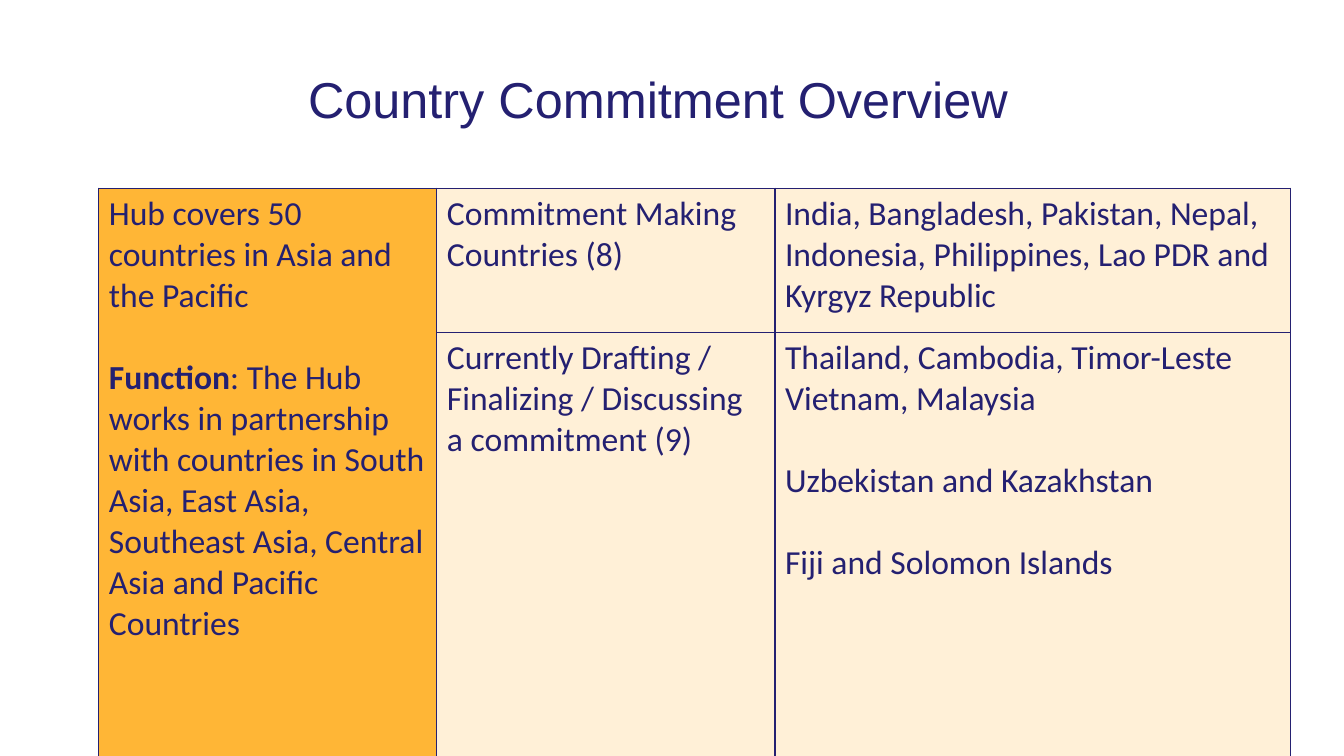
from lxml import etree
from pptx import Presentation
from pptx.dml.color import RGBColor
from pptx.enum.text import PP_ALIGN
from pptx.oxml.ns import qn
from pptx.util import Cm, Pt

CENTER = PP_ALIGN.CENTER
NAVY, ORANGE, CREAM = "242071", "FFB636", "FFF0D7"


def color(value):
    return RGBColor.from_string(value)


def style(p, font, size):
    p.font.name = font
    p.font.size = Pt(size)
    p.font.color.rgb = color(NAVY)


prs = Presentation()
prs.slide_width, prs.slide_height = Cm(33.87), Cm(19.05)
s = prs.slides.add_slide(prs.slide_layouts[6])

table = s.shapes.add_table(2, 3, Cm(2.49), Cm(4.74), Cm(30.04), Cm(11.61)).table
table.first_row = table.horz_banding = False
for column, width in zip(table.columns, (8.52, 8.52, 13)):
    column.width = Cm(width)
for row, height in zip(table.rows, (3.63, 7.98)):
    row.height = Cm(height)
table.cell(0, 0).merge(table.cell(1, 0))

contents = {
    (0, 0): [
        "Hub covers 50 countries in Asia and the Pacific",
        "Function: The Hub works in partnership with countries in South Asia, "
        "East Asia, Southeast Asia, Central Asia and Pacific Countries",
    ],
    (0, 1): ["Commitment Making Countries (8)"],
    (0, 2): ["India, Bangladesh, Pakistan, Nepal, Indonesia, Philippines, "
             "Lao PDR and Kyrgyz Republic"],
    (1, 1): ["Currently Drafting / Finalizing / Discussing a commitment (9)"],
    (1, 2): [
        "Thailand, Cambodia, Timor-Leste Vietnam, Malaysia",
        "Uzbekistan and Kazakhstan",
        "Fiji and Solomon Islands",
    ],
}
for (row, col), paragraphs in contents.items():
    tf = table.cell(row, col).text_frame
    for i, text in enumerate(paragraphs):
        p = tf.add_paragraph() if i else tf.paragraphs[0]
        style(p, "Calibri", 24)
        if i:
            p.space_before = Pt(29.3)
        label, colon, rest = text.partition(":")
        r = p.add_run()
        r.text = label
        if colon:
            r.font.bold = True
            p.add_run().text = colon + rest

for row in range(2):
    for col in range(3):
        cell = table.cell(row, col)
        tcPr = cell._tc.get_or_add_tcPr()
        for side in ("a:lnL", "a:lnR", "a:lnT", "a:lnB"):
            line = etree.SubElement(tcPr, qn(side), w=str(Pt(1)))
            fill = etree.SubElement(line, qn("a:solidFill"))
            etree.SubElement(fill, qn("a:srgbClr"), val=NAVY)
        cell.fill.solid()
        cell.fill.fore_color.rgb = color(CREAM if col else ORANGE)

title = s.shapes.add_textbox(Cm(1.8), Cm(1.6), Cm(29.57), Cm(1.83))
tf = title.text_frame
tf.word_wrap = True
p = tf.paragraphs[0]
p.text = "Country Commitment Overview"
p.alignment = CENTER
style(p, "Arial", 36)

prs.save("out.pptx")
